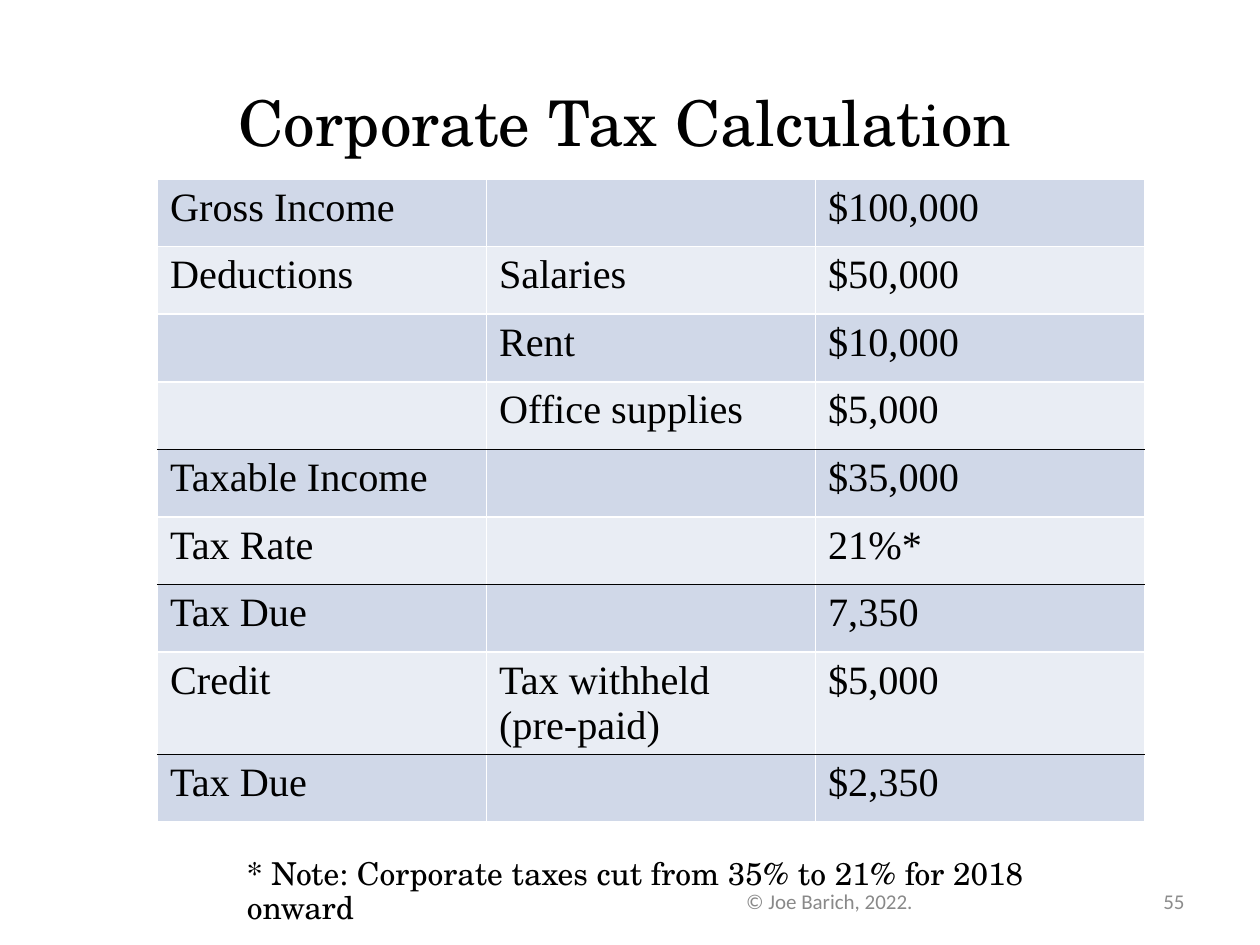
from lxml import etree
from pptx import Presentation
from pptx.dml.color import RGBColor
from pptx.enum.text import MSO_ANCHOR, PP_ALIGN
from pptx.oxml.ns import qn
from pptx.util import Pt

LEFT, CENTER, RIGHT = PP_ALIGN.LEFT, PP_ALIGN.CENTER, PP_ALIGN.RIGHT
TOP, MIDDLE = MSO_ANCHOR.TOP, MSO_ANCHOR.MIDDLE
TITLE_ONLY = 5

SERIF, TABLE_FONT, FOOTER_FONT = "TeX Gyre Schola", "Times New Roman", "Calibri"
BLACK, WHITE = "000000", "FFFFFF"
BANDS = ("D0D8E8", "E9EDF4")

ROWS = [
    ("Gross Income", "", "$100,000"),
    ("Deductions", "Salaries", "$50,000"),
    ("", "Rent", "$10,000"),
    ("", "Office supplies", "$5,000"),
    ("Taxable Income", "", "$35,000"),
    ("Tax Rate", "", "21%*"),
    ("Tax Due", "", "7,350"),
    ("Credit", "Tax withheld\n(pre-paid)", "$5,000"),
    ("Tax Due", "", "$2,350"),
]
RULED_ROWS = {3, 5, 7}  # rows with a black line below
ROW_HEIGHT, TALL_ROW_HEIGHT = 38.65, 58.3
COLUMN_WIDTH = 188


def color(hex_string):
    return RGBColor.from_string(hex_string)


def set_font(para, name, size, hex_string):
    para.font.name = name
    para.font.size = Pt(size)
    para.font.color.rgb = color(hex_string)


def place(shape, left, top, width, height):
    shape.left, shape.top = Pt(left), Pt(top)
    shape.width, shape.height = Pt(width), Pt(height)


def add_title(page, text):
    title = page.shapes.title
    place(title, 18, 12.25, 678, 114.5)
    title.text_frame.text = text
    title.text_frame.vertical_anchor = MIDDLE
    para = title.text_frame.paragraphs[0]
    para.alignment = CENTER
    set_font(para, SERIF, 36, BLACK)


def add_text(page, text, bounds, font, align=LEFT, anchor=TOP, spacing=None):
    box = page.shapes.add_textbox(*map(Pt, bounds))
    frame = box.text_frame
    frame.word_wrap = True
    frame.vertical_anchor = anchor
    frame.text = text
    para = frame.paragraphs[0]
    para.alignment = align
    if spacing:
        para.line_spacing = spacing
    set_font(para, *font)


def add_border(cell, side, hex_string):
    properties = cell._tc.get_or_add_tcPr()
    line = etree.SubElement(properties, qn(f"a:ln{side}"), w=str(Pt(1)))
    fill = etree.SubElement(line, qn("a:solidFill"))
    etree.SubElement(fill, qn("a:srgbClr"), val=hex_string)


def format_cell(cell, text, row):
    above = BLACK if row - 1 in RULED_ROWS else WHITE
    below = BLACK if row in RULED_ROWS else WHITE
    # Borders come before the fill in the cell properties
    for side, hex_string in zip("LRTB", (WHITE, WHITE, above, below)):
        add_border(cell, side, hex_string)
    cell.fill.solid()
    cell.fill.fore_color.rgb = color(BANDS[row % 2])
    cell.text = text
    for para in cell.text_frame.paragraphs:
        set_font(para, TABLE_FONT, 23, BLACK)


def add_tax_table(page):
    heights = [TALL_ROW_HEIGHT if any("\n" in text for text in texts)
               else ROW_HEIGHT for texts in ROWS]
    columns = len(ROWS[0])
    table = page.shapes.add_table(
        len(ROWS), columns, Pt(90), Pt(102.25),
        Pt(columns * COLUMN_WIDTH), Pt(sum(heights))).table
    table.first_row = table.horz_banding = False
    for column in table.columns:
        column.width = Pt(COLUMN_WIDTH)
    for row, texts in enumerate(ROWS):
        table.rows[row].height = Pt(heights[row])
        for column, text in enumerate(texts):
            format_cell(table.cell(row, column), text, row)


def main():
    deck = Presentation()
    deck.slide_width, deck.slide_height = Pt(720), Pt(540)
    page = deck.slides.add_slide(deck.slide_layouts[TITLE_ONLY])

    add_title(page, "Corporate Tax Calculation")
    add_tax_table(page)

    # Footer and page number
    add_text(page, "55", (600, 500.5, 84, 28.75),
             (FOOTER_FONT, 12, "8C8C8C"), RIGHT, MIDDLE)
    add_text(page, "© Joe Barich, 2022.", (360, 500.5, 228, 28.75),
             (FOOTER_FONT, 12, "898989"), CENTER, MIDDLE)

    # Footnote to the tax rate
    add_text(page, "* Note: Corporate taxes cut from 35% to 21% for 2018 onward",
             (134, 486.75, 506, 26.6), (SERIF, 18, BLACK), spacing=0.9)

    deck.save("out.pptx")


if __name__ == "__main__":
    main()
